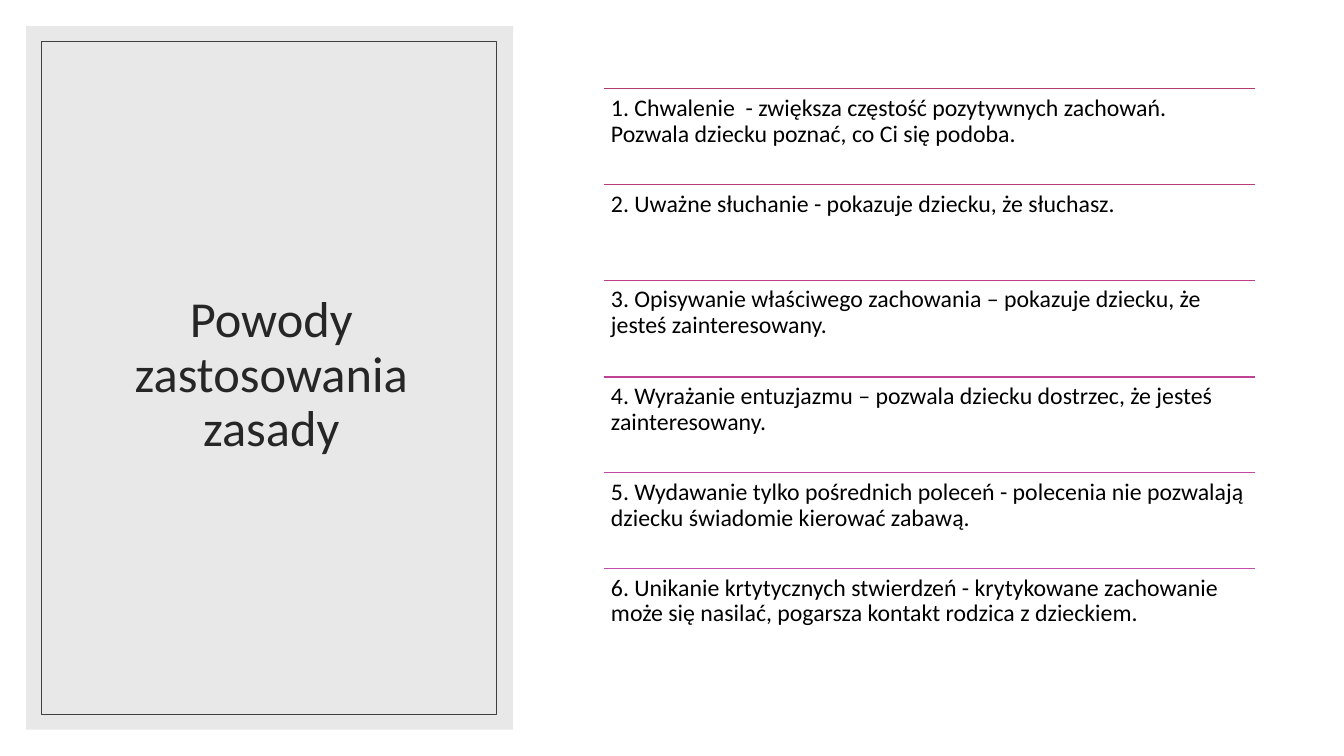
from dataclasses import dataclass

from lxml.etree import SubElement
from pptx import Presentation
from pptx.dml.color import RGBColor
from pptx.enum.shapes import MSO_CONNECTOR, MSO_SHAPE
from pptx.enum.text import MSO_ANCHOR, MSO_AUTO_SIZE, PP_ALIGN
from pptx.oxml.ns import qn
from pptx.shapes.base import BaseShape
from pptx.slide import Slide
from pptx.text.text import TextFrame
from pptx.util import Emu, Pt

PX = 9144  # EMU in one px, 100 px to the inch
FONT = "Calibri"
COLORS = {
    "background": "FFFFFF",
    "panel": "D9D9D9",
    "frame": "404040",
    "title": "262626",
    "text": "000000",
}

LIST_LEFT, LIST_TOP, LIST_WIDTH = 599, 88, 646
LIST_HEIGHT = 571
INSET = 7


@dataclass
class Box:
    left: int
    top: int
    width: int
    height: int

    def emu(self) -> tuple[Emu, ...]:
        return tuple(Emu(v * PX) for v in (self.left, self.top, self.width, self.height))


@dataclass
class Reason:
    text: str
    rule_color: str


REASONS = [
    Reason("1. Chwalenie  - zwiększa częstość pozytywnych zachowań. "
           "Pozwala dziecku poznać, co Ci się podoba.", "B13B6C"),
    Reason("2. Uważne słuchanie - pokazuje dziecku, że słuchasz.", "B63D79"),
    Reason("3. Opisywanie właściwego zachowania – pokazuje dziecku, "
           "że jesteś zainteresowany.", "BC3F87"),
    Reason("4. Wyrażanie entuzjazmu – pozwala dziecku dostrzec, "
           "że jesteś zainteresowany.", "C04295"),
    Reason("5. Wydawanie tylko pośrednich poleceń - polecenia nie pozwalają "
           "dziecku świadomie kierować zabawą.", "C148A3"),
    Reason("6. Unikanie krtytycznych stwierdzeń - krytykowane zachowanie "
           "może się nasilać, pogarsza kontakt rodzica z dzieckiem.", "C34DAF"),
]


def rgb(value: str) -> RGBColor:
    return RGBColor.from_string(value)


def add_rect(s: Slide, box: Box, fill: str | None = None, line: str | None = None) -> BaseShape:
    sp = s.shapes.add_shape(MSO_SHAPE.RECTANGLE, *box.emu())
    sp.shadow.inherit = False
    if fill:
        sp.fill.solid()
        sp.fill.fore_color.rgb = rgb(fill)
    else:
        sp.fill.background()
    if line:
        sp.line.color.rgb = rgb(line)
        sp.line.width = Pt(0.5)
    else:
        sp.line.fill.background()
    return sp


def set_text(tf: TextFrame, text: str, size: int, color: str, align: PP_ALIGN) -> None:
    tf.text = text
    tf.word_wrap = True
    tf.auto_size = MSO_AUTO_SIZE.NONE
    p = tf.paragraphs[0]
    p.alignment = align
    p.line_spacing = 0.9
    r = p.runs[0]
    r.font.name = FONT
    r.font.size = Pt(size)
    r.font.color.rgb = rgb(color)


def add_rule(s: Slide, top: int, color: str) -> None:
    x1, y, x2 = (Emu(v * PX) for v in (LIST_LEFT, top, LIST_LEFT + LIST_WIDTH))
    line = s.shapes.add_connector(MSO_CONNECTOR.STRAIGHT, x1, y, x2, y)
    line.line.color.rgb = rgb(color)
    line.line.width = Pt(1)
    SubElement(line._element.spPr, qn("a:effectLst"))


def add_reason(s: Slide, reason: Reason, top: int, height: int) -> None:
    add_rule(s, top, reason.rule_color)
    sp = s.shapes.add_textbox(*Box(LIST_LEFT, top, LIST_WIDTH, height).emu())
    tf = sp.text_frame
    tf.margin_left = tf.margin_right = tf.margin_top = tf.margin_bottom = Emu(INSET * PX)
    set_text(tf, reason.text, 17, COLORS["text"], PP_ALIGN.LEFT)


def main() -> None:
    prs = Presentation()
    prs.slide_width, prs.slide_height = Emu(1333 * PX), Emu(750 * PX)
    s = prs.slides.add_slide(prs.slide_layouts[5])

    # Background and translucent title panel
    add_rect(s, Box(0, 0, 1333, 750), fill=COLORS["background"])
    panel = add_rect(s, Box(26, 26, 483, 698), fill=COLORS["panel"])
    panel_color = panel._element.spPr.find(qn("a:solidFill"))[0]
    SubElement(panel_color, qn("a:alpha"), val="60000")

    # Title, raised above the panel
    title = s.shapes.title
    title.left, title.top, title.width, title.height = Box(63, 61, 412, 624).emu()
    set_text(title.text_frame, "Powody zastosowania zasady", 36, COLORS["title"],
             PP_ALIGN.CENTER)
    title.text_frame.vertical_anchor = MSO_ANCHOR.MIDDLE
    panel._element.addnext(title._element)
    add_rect(s, Box(41, 41, 451, 668), line=COLORS["frame"])

    # Ruled list of reasons
    pitch = LIST_HEIGHT / len(REASONS)
    for i, reason in enumerate(REASONS):
        add_reason(s, reason, LIST_TOP + round(i * pitch), round(pitch))

    prs.save("out.pptx")


if __name__ == "__main__":
    main()
